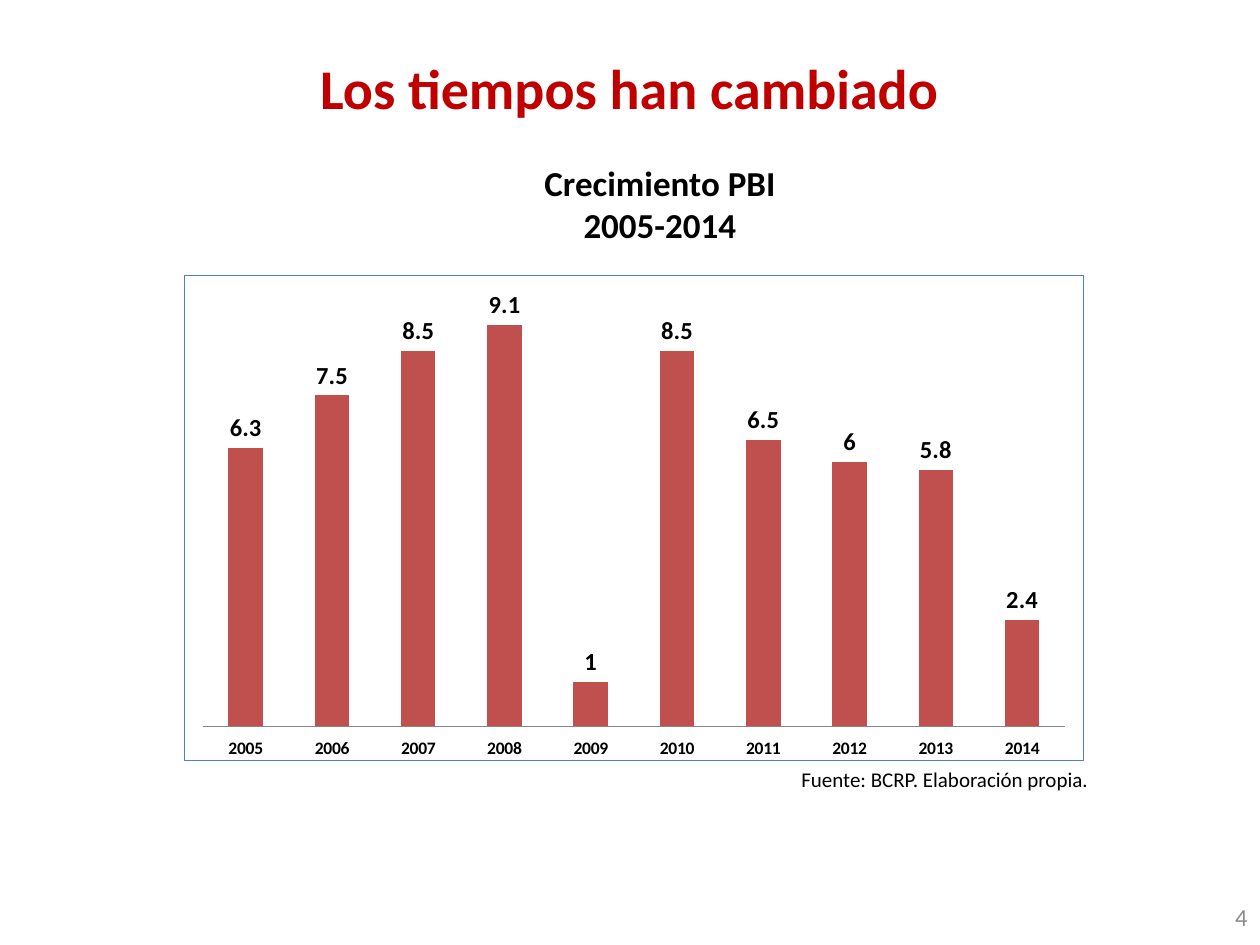
from lxml import etree
from pptx import Presentation
from pptx.chart.data import CategoryChartData
from pptx.dml.color import RGBColor
from pptx.enum.chart import XL_CHART_TYPE, XL_LABEL_POSITION, XL_TICK_LABEL_POSITION, XL_TICK_MARK
from pptx.enum.text import MSO_ANCHOR, PP_ALIGN
from pptx.oxml import parse_xml
from pptx.util import Pt

COLUMNS = XL_CHART_TYPE.COLUMN_CLUSTERED
OUTSIDE = XL_LABEL_POSITION.OUTSIDE_END
LOW = XL_TICK_LABEL_POSITION.LOW
NO_TICK = XL_TICK_MARK.NONE
TOP, MIDDLE = MSO_ANCHOR.TOP, MSO_ANCHOR.MIDDLE
LEFT, CENTER, RIGHT = PP_ALIGN.LEFT, PP_ALIGN.CENTER, PP_ALIGN.RIGHT

PX = 914400 / 126
FONT = "Calibri"
COLORS = {
    "white": "FFFFFF",
    "black": "000000",
    "title": "C00000",
    "number": "8C8C8C",
    "bar": "C0504D",
    "border": "4F81BD",
    "axis": "868686",
}
C_NS = "http://schemas.openxmlformats.org/drawingml/2006/chart"
A_NS = "http://schemas.openxmlformats.org/drawingml/2006/main"


def px(*lengths):
    return [round(length * PX) for length in lengths]


def add_text(box, lines, size, color, align, bold=False, anchor=TOP, wrap=True):
    holder = slide.shapes.add_textbox(*px(*box))
    frame = holder.text_frame
    frame.word_wrap = wrap
    frame.vertical_anchor = anchor
    for index, line in enumerate(lines):
        paragraph = frame.paragraphs[0] if index == 0 else frame.add_paragraph()
        paragraph.alignment = align
        run = paragraph.add_run()
        run.text = line
        run.font.name = FONT
        run.font.size = Pt(size)
        run.font.bold = bold
        run.font.color.rgb = RGBColor.from_string(COLORS[color])
    return holder


prs = Presentation()
prs.slide_width, prs.slide_height = px(1260, 945)
slide = prs.slides.add_slide(prs.slide_layouts[6])

add_text((966, 892, 294, 50), ["4"], 14, "number", RIGHT, anchor=MIDDLE)

title = add_text((34, 35, 1191, 112), ["Los tiempos han cambiado"], 32, "title",
                 CENTER, bold=True, anchor=MIDDLE)
title.fill.solid()
title.fill.fore_color.rgb = RGBColor.from_string(COLORS["white"])
title.text_frame.paragraphs[0].line_spacing = 0.9

add_text((383, 155, 554, 97), ["Crecimiento PBI", "2005-2014"], 20, "black", CENTER, bold=True)
add_text((789, 760, 315, 38), ["Fuente: BCRP. Elaboración propia."], 12, "black", LEFT, wrap=False)

growth_data = CategoryChartData()
growth_data.categories = [str(year) for year in range(2005, 2015)]
growth_data.add_series("Series 1", (6.3, 7.5, 8.5, 9.1, 1, 8.5, 6.5, 6, 5.8, 2.4))
growth = slide.shapes.add_chart(COLUMNS, *px(184, 275, 900, 486), growth_data).chart
growth.has_title = False
growth.has_legend = False
growth.font.name = FONT
growth.font.size = Pt(10)
growth.font.color.rgb = RGBColor.from_string(COLORS["black"])

years = growth.category_axis
years.major_tick_mark = NO_TICK
years.minor_tick_mark = NO_TICK
years.tick_label_position = LOW
years.tick_labels.font.bold = True
years.tick_labels.font.size = Pt(10)
years.format.line.color.rgb = RGBColor.from_string(COLORS["axis"])
years.format.line.width = Pt(0.75)

rates = growth.value_axis
rates.minimum_scale = 0
rates.maximum_scale = 10
rates.has_major_gridlines = False
rates.visible = False

columns = growth.plots[0]
columns.gap_width = 150
columns.overlap = -25
columns.vary_by_categories = False
bars = columns.series[0]
bars.format.fill.solid()
bars.format.fill.fore_color.rgb = RGBColor.from_string(COLORS["bar"])

labels = bars.data_labels
labels.show_value = True
labels.position = OUTSIDE
labels.font.name = FONT
labels.font.size = Pt(14)
labels.font.bold = True
labels.font.color.rgb = RGBColor.from_string(COLORS["black"])

plot_area = growth._chartSpace.chart.plotArea
for old_layout in plot_area.findall(f"{{{C_NS}}}layout"):
    plot_area.remove(old_layout)
layout = etree.Element(f"{{{C_NS}}}layout")
manual = etree.SubElement(layout, f"{{{C_NS}}}manualLayout")
for tag, value in (("layoutTarget", "inner"), ("xMode", "edge"), ("yMode", "edge"),
                   ("x", "0.02"), ("y", "0.02"), ("w", "0.96"), ("h", "0.91")):
    etree.SubElement(manual, f"{{{C_NS}}}{tag}", val=value)
plot_area.insert(0, layout)

growth._chartSpace.chart.addnext(parse_xml(
    f'<c:spPr xmlns:c="{C_NS}" xmlns:a="{A_NS}"><a:noFill/><a:ln w="9525"><a:solidFill>'
    f'<a:srgbClr val="{COLORS["border"]}"/></a:solidFill></a:ln></c:spPr>'))

prs.save("out.pptx")
